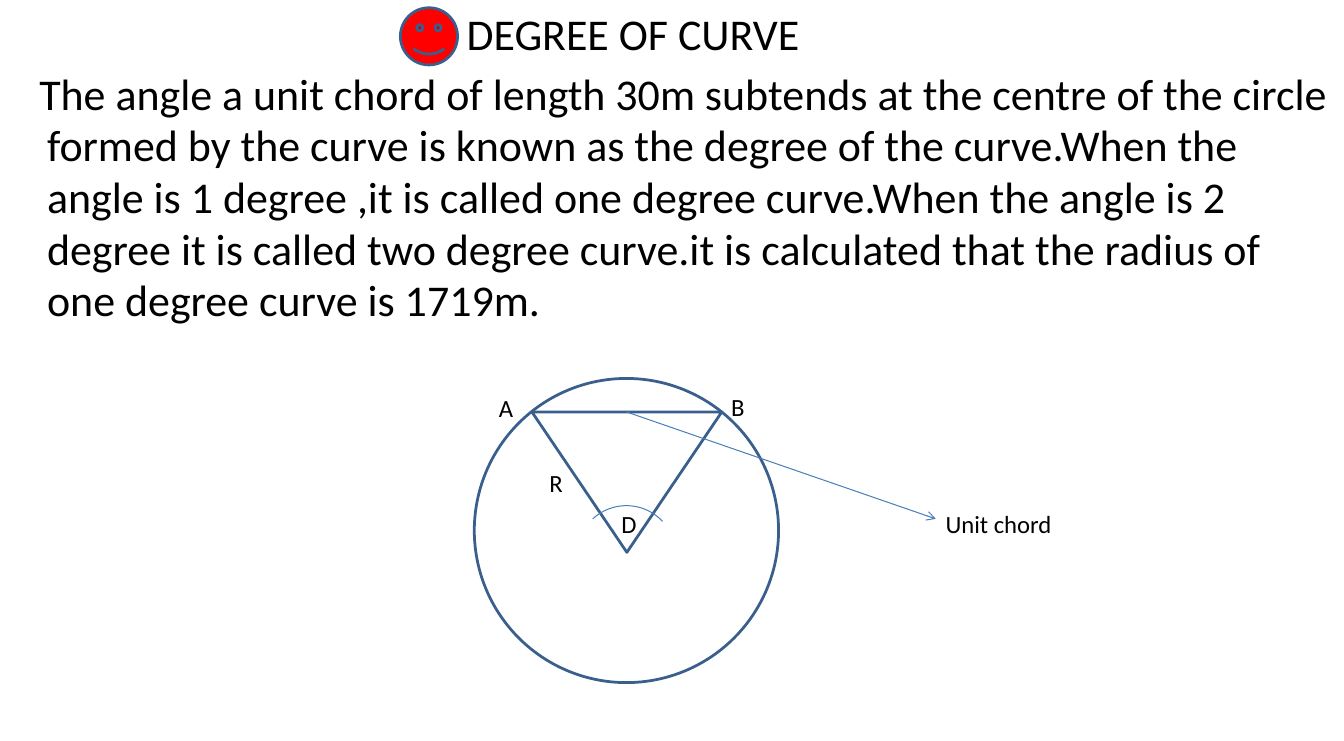
from dataclasses import dataclass

import pptx
import pptx.dml.color
import pptx.enum.shapes
import pptx.enum.text
import pptx.oxml.ns
import pptx.util
from lxml import etree
from pptx.dml.color import RGBColor
from pptx.enum.shapes import MSO_SHAPE
from pptx.util import Cm, Pt

BLACK = RGBColor(0x00, 0x00, 0x00)
WHITE = RGBColor(0xFF, 0xFF, 0xFF)
RED = RGBColor(0xFF, 0x00, 0x00)
OUTLINE_BLUE = RGBColor(0x3A, 0x5F, 0x8C)
THIN_BLUE = RGBColor(0x4B, 0x7E, 0xBC)
FONT = "Calibri"

DEFINITION = (
    "The angle a unit chord of length 30m subtends at the centre of the circle "
    "formed by the curve is known as the degree of the curve.When the angle is "
    "1 degree ,it is called one degree curve.When the angle is 2 degree it is "
    "called two degree curve.it is calculated that the radius of one degree "
    "curve is 1719m."
)


@dataclass(frozen=True)
class Figure:
    """A preset shape; lengths in centimetres."""
    kind: MSO_SHAPE
    left: float
    top: float
    width: float
    height: float
    fill: RGBColor | None = WHITE
    line: RGBColor = OUTLINE_BLUE
    weight: float = 2
    rotation: float = 0


@dataclass(frozen=True)
class Label:
    """A one-line caption; lengths in centimetres."""
    text: str
    left: float
    top: float
    width: float


FIGURES = [
    Figure(MSO_SHAPE.OVAL, 12.19, 9.73, 7.82, 7.82),
    Figure(MSO_SHAPE.ISOSCELES_TRIANGLE, 13.67, 10.59, 4.88, 3.61, rotation=180),
    Figure(MSO_SHAPE.ARC, 14.83, 13, 2.54, 2.54, None, THIN_BLUE, 0.75, 317),
    Figure(MSO_SHAPE.SMILEY_FACE, 10.29, 0.2, 1.47, 1.47, fill=RED),
]
LABELS = [
    Label("A", 12.57, 9.98, 0.89),
    Label("B", 18.54, 9.96, 0.86),
    Label("D", 15.72, 12.95, 0.91),
    Label("R", 13.87, 11.89, 0.86),
    Label("Unit chord", 24.05, 12.95, 3.28),
]


def format_runs(paragraph, size: float) -> None:
    for run in paragraph.runs:
        run.font.name = FONT
        run.font.size = Pt(size)
        run.font.color.rgb = BLACK


def clear_insets(frame) -> None:
    frame.margin_left = frame.margin_right = 0
    frame.margin_top = frame.margin_bottom = 0


def draw_figure(slide, figure: Figure) -> None:
    shape = slide.shapes.add_shape(
        figure.kind, Cm(figure.left), Cm(figure.top),
        Cm(figure.width), Cm(figure.height))
    shape.shadow.inherit = False
    shape.rotation = figure.rotation
    shape.line.color.rgb = figure.line
    shape.line.width = Pt(figure.weight)
    if figure.fill is None:
        shape.fill.background()
    else:
        shape.fill.solid()
        shape.fill.fore_color.rgb = figure.fill


def draw_label(slide, label: Label) -> None:
    caption = slide.shapes.add_textbox(
        Cm(label.left), Cm(label.top), Cm(label.width), Cm(1.02))
    caption.text_frame.word_wrap = False
    caption.text_frame.text = label.text
    format_runs(caption.text_frame.paragraphs[0], 18)


def draw_chord_pointer(slide) -> None:
    pointer = slide.shapes.add_connector(
        pptx.enum.shapes.MSO_CONNECTOR.STRAIGHT,
        Cm(16.1), Cm(10.59), Cm(24.05), Cm(13.34))
    pointer.line.color.rgb = THIN_BLUE
    pointer.line.width = Pt(0.75)
    qn = pptx.oxml.ns.qn
    etree.SubElement(pointer.line._get_or_add_ln(), qn("a:tailEnd"), type="arrow")
    etree.SubElement(pointer._element.spPr, qn("a:effectLst"))


def write_heading(slide) -> None:
    heading = slide.shapes.title
    heading.left, heading.top = Cm(11.99), Cm(0.17)
    heading.width, heading.height = Cm(10), Cm(1.38)
    frame = heading.text_frame
    clear_insets(frame)
    frame.vertical_anchor = pptx.enum.text.MSO_ANCHOR.TOP
    frame.text = "DEGREE OF CURVE"
    frame.paragraphs[0].alignment = pptx.enum.text.PP_ALIGN.LEFT
    format_runs(frame.paragraphs[0], 32)


def write_definition(slide) -> None:
    definition = slide.shapes.add_textbox(Cm(0), Cm(1.77), Cm(34.29), Cm(7))
    frame = definition.text_frame
    clear_insets(frame)
    frame.word_wrap = True
    frame.text = DEFINITION
    paragraph = frame.paragraphs[0]
    paragraph.line_spacing = 0.98
    format_runs(paragraph, 32)
    # Hanging indent: the first line starts slightly further left
    properties = paragraph._p.get_or_add_pPr()
    properties.set("marL", str(Cm(1.21)))
    properties.set("indent", str(Cm(-0.2)))


def main() -> None:
    presentation = pptx.Presentation()
    presentation.slide_width, presentation.slide_height = Cm(34.54), Cm(19.05)
    slide = presentation.slides.add_slide(presentation.slide_layouts[5])

    # Heading and definition
    write_heading(slide)
    write_definition(slide)

    # Circle diagram and heading bullet
    for figure in FIGURES:
        draw_figure(slide, figure)
    for label in LABELS:
        draw_label(slide, label)
    draw_chord_pointer(slide)

    presentation.save("out.pptx")


if __name__ == "__main__":
    main()
